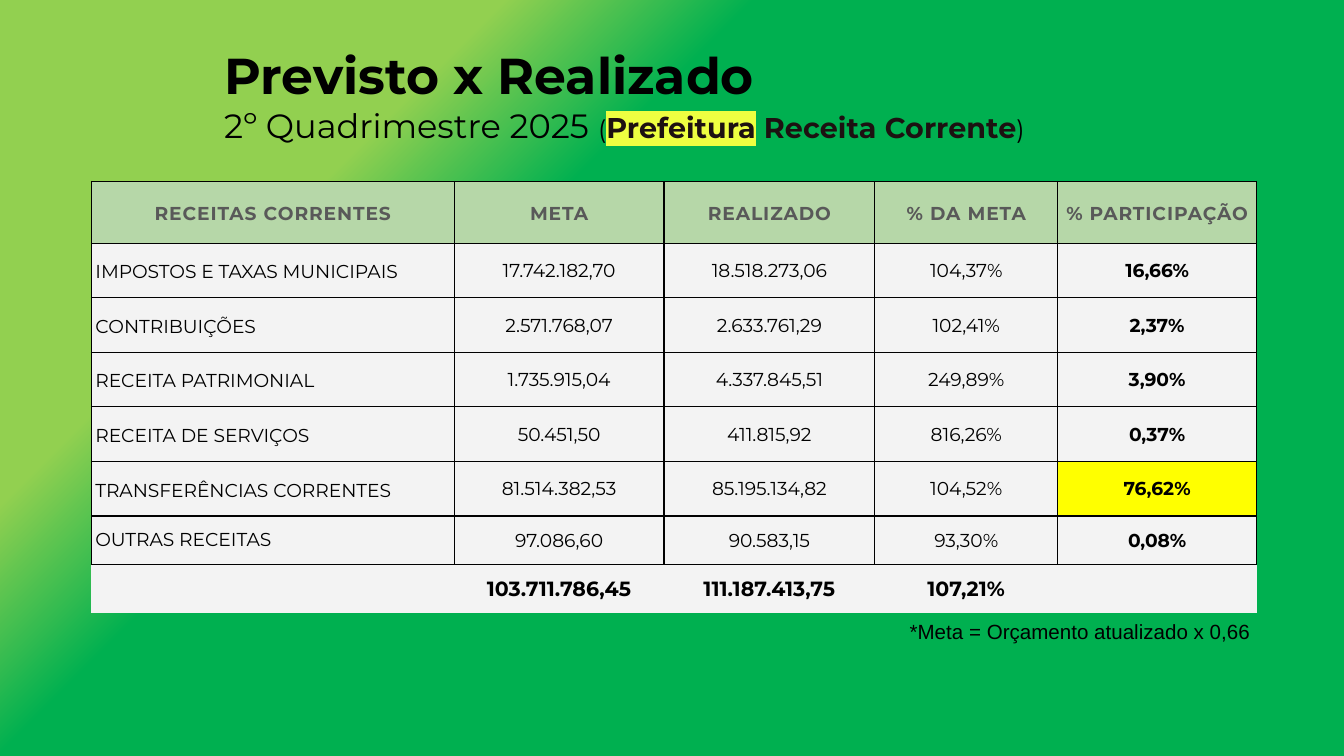
from dataclasses import dataclass
from itertools import product

from lxml.etree import SubElement
from pptx import Presentation
from pptx.dml.color import RGBColor
from pptx.enum.text import MSO_ANCHOR, MSO_AUTO_SIZE, PP_ALIGN
from pptx.oxml import parse_xml
from pptx.oxml.ns import nsdecls, qn
from pptx.util import Inches, Pt

HUES = {
    "lime": "92D050", "green": "00B050", "black": "000000", "dark": "1D1111",
    "mark": "EEFF41", "head": "B6D7A8", "gray": "595959", "pale": "F3F3F3",
    "yellow": "FFFF00",
}
FACE = "Montserrat"


@dataclass
class Part:
    text: str
    size: float
    hue: str = "black"
    bold: bool = False
    mark: str = ""
    space: float = 0
    face: str = FACE


def add_part(para, part: Part) -> None:
    run = para.add_run()
    run.text = part.text
    font = run.font
    font.size, font.bold, font.name = Pt(part.size), part.bold, part.face
    font.color.rgb = RGBColor.from_string(HUES[part.hue])
    props = run._r.get_or_add_rPr()
    if part.space:
        props.set("spc", str(int(part.space * 100)))
    if part.mark:
        props.find(qn("a:solidFill")).addnext(parse_xml(
            f'<a:highlight {nsdecls("a")}><a:srgbClr val="{HUES[part.mark]}"/></a:highlight>'))


def add_box(slide, left: float, top: float, width: float, height: float):
    box = slide.shapes.add_textbox(
        Inches(left), Inches(top), Inches(width), Inches(height))
    box.text_frame.word_wrap = True
    return box.text_frame


def set_back(slide) -> None:
    stops = [(0, "lime"), (24, "lime"), (36, "green"), (100, "green")]
    marks = "".join(f'<a:gs pos="{pos * 1000}"><a:srgbClr val="{HUES[hue]}"/></a:gs>'
                    for pos, hue in stops)
    fill = slide.background.fill
    fill.solid()
    old = slide._element.cSld.bg.bgPr.find(qn("a:solidFill"))
    old.getparent().replace(old, parse_xml(
        f'<a:gradFill {nsdecls("a")}><a:gsLst>{marks}</a:gsLst>'
        '<a:lin ang="2700000" scaled="0"/></a:gradFill>'))


def set_lines(cell, shown: str) -> None:
    props = cell._tc.get_or_add_tcPr()
    for spot, side in enumerate("LRTB"):
        line = parse_xml(f'<a:ln{side} {nsdecls("a")} w="{Pt(0.75)}"/>')
        if side in shown:
            fill = SubElement(line, qn("a:solidFill"))
            SubElement(fill, qn("a:srgbClr"), val=HUES["black"])
        else:
            SubElement(line, qn("a:noFill"))
        props.insert(spot, line)


def set_cell(cell, part: Part, fill: str, lines: str,
             wide: bool, left: bool, lead: float) -> None:
    cell.fill.solid()
    cell.fill.fore_color.rgb = RGBColor.from_string(HUES[fill])
    set_lines(cell, lines)
    cell.vertical_anchor = MSO_ANCHOR.MIDDLE
    cell.margin_left = cell.margin_right = Inches(0.03 if wide else 0.01)
    cell.margin_top = Inches(0.02 if wide else 0.01)
    cell.margin_bottom = Inches(0.02 if wide else 0)
    para = cell.text_frame.paragraphs[0]
    para.alignment = PP_ALIGN.LEFT if left else PP_ALIGN.CENTER
    para.line_spacing = lead
    if part.text:
        add_part(para, part)


ROWS = [
    ("RECEITAS CORRENTES", "META", "REALIZADO", "% DA META", "% PARTICIPAÇÃO"),
    ("IMPOSTOS E TAXAS MUNICIPAIS", "17.742.182,70", "18.518.273,06", "104,37%", "16,66%"),
    ("CONTRIBUIÇÕES", "2.571.768,07", "2.633.761,29", "102,41%", "2,37%"),
    ("RECEITA PATRIMONIAL", "1.735.915,04", "4.337.845,51", "249,89%", "3,90%"),
    ("RECEITA DE SERVIÇOS", "50.451,50", "411.815,92", "816,26%", "0,37%"),
    ("TRANSFERÊNCIAS CORRENTES", "81.514.382,53", "85.195.134,82", "104,52%", "76,62%"),
    ("OUTRAS RECEITAS", "97.086,60", "90.583,15", "93,30%", "0,08%"),
    ("", "103.711.786,45", "111.187.413,75", "107,21%", ""),
]
COLS = [2.7, 1.56, 1.57, 1.36, 1.48]
TALL, HEAD, FOOT = 3.21, 0.46, 0.36


def add_grid(slide) -> None:
    table = slide.shapes.add_table(
        len(ROWS), len(COLS), Inches(0.68), Inches(1.35),
        Inches(sum(COLS)), Inches(TALL)).table
    table.first_row = table.horz_banding = False
    for col, width in zip(table.columns, COLS):
        col.width = Inches(width)
    body = (TALL - HEAD - 2 * FOOT) / 5
    for row, height in zip(table.rows, [HEAD] + [body] * 5 + [FOOT] * 2):
        row.height = Inches(height)

    last = len(ROWS) - 1
    for r, c in product(range(len(ROWS)), range(len(COLS))):
        head, total = r == 0, r == last
        name = c == 0 and not head and not total
        text = ROWS[r][c]
        part = Part(text, 11 if total else 10, "gray" if head else "black",
                    head or total or c == 4, space=0.5 if head else 0)
        fill = "head" if head else "yellow" if text == "76,62%" else "pale"
        lead = 1.15 if head or (name and r < last - 1) else 1.0
        set_cell(table.cell(r, c), part, fill, "T" if total else "LRTB",
                 head or name, name, lead)


def main() -> None:
    deck = Presentation()
    # Widescreen, 16:9
    deck.slide_width = Inches(10)
    deck.slide_height = deck.slide_width * 9 // 16
    slide = deck.slides.add_slide(deck.slide_layouts[6])
    set_back(slide)

    # Title and subtitle
    frame = add_box(slide, 1.57, 0.21, 7.78, 0.92)
    frame.vertical_anchor = MSO_ANCHOR.BOTTOM
    para = frame.paragraphs[0]
    add_part(para, Part("Previsto x Realizado", 27, bold=True))
    para.add_line_break()
    for part in (
        Part("2º Quadrimestre 2025 ", 18),
        Part("(", 13.5),
        Part("Prefeitura", 15.3, "dark", True, "mark"),
        Part(" Receita Corrente", 15.3, "dark", True),
        Part(")", 13.5),
    ):
        add_part(para, part)

    # Revenue table
    add_grid(slide)

    # Footnote
    frame = add_box(slide, 6.67, 4.56, 2.76, 0.29)
    frame.auto_size = MSO_AUTO_SIZE.SHAPE_TO_FIT_TEXT
    add_part(frame.paragraphs[0],
             Part("*Meta = Orçamento atualizado x 0,66", 11, face="Arial"))

    deck.save("out.pptx")


if __name__ == "__main__":
    main()
